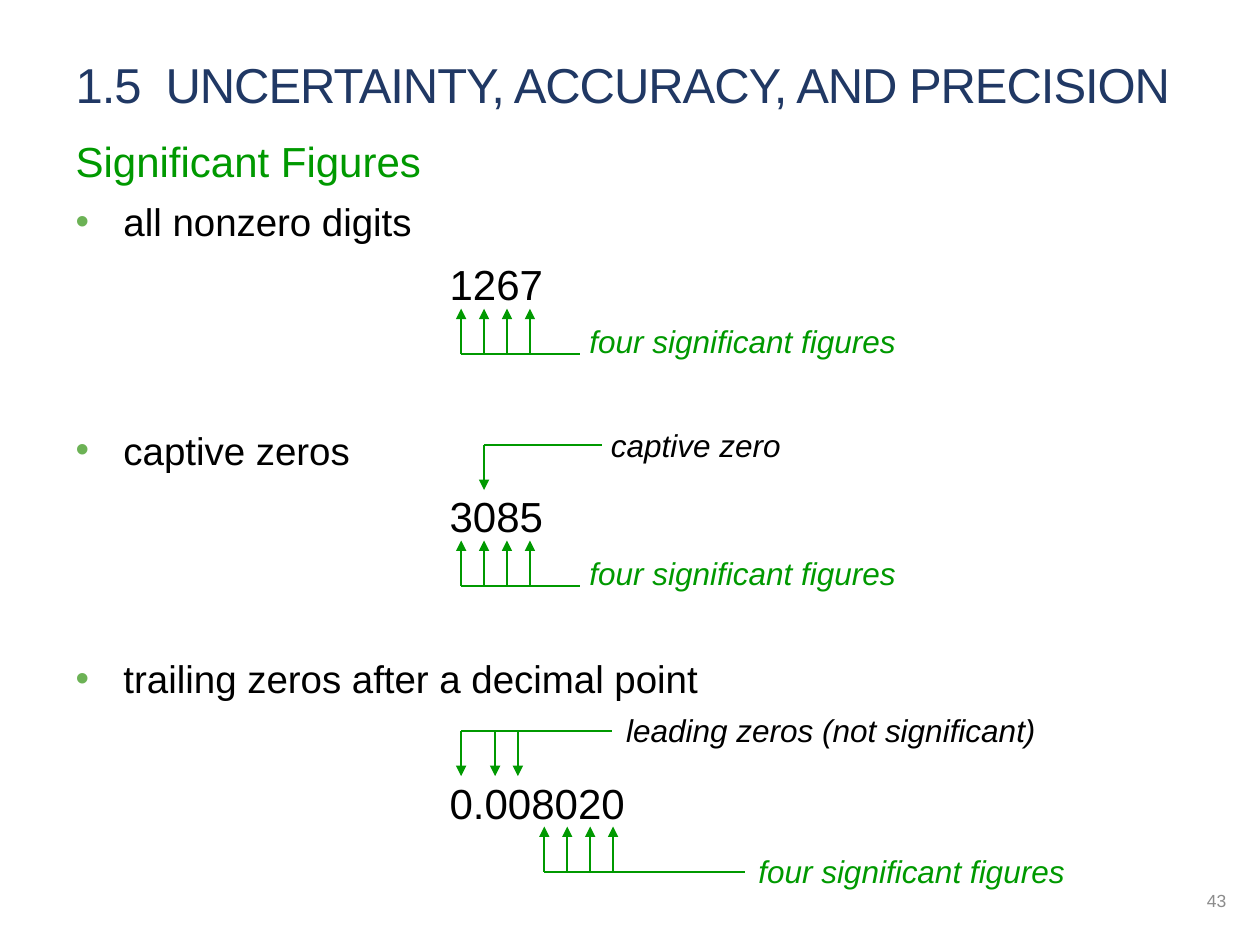
from lxml.etree import SubElement
from pptx import Presentation
from pptx.dml.color import RGBColor
from pptx.enum.shapes import MSO_CONNECTOR
from pptx.enum.text import MSO_ANCHOR, MSO_AUTO_SIZE, PP_ALIGN
from pptx.oxml.ns import qn
from pptx.util import Inches, Pt

NAVY = RGBColor(0x20, 0x38, 0x64)
GREEN = RGBColor(0x00, 0x99, 0x00)
BULLET_GREEN = RGBColor(0x6C, 0xB2, 0x55)
GRAY = RGBColor(0x8C, 0x8C, 0x8C)
BLACK = RGBColor(0x00, 0x00, 0x00)

COLUMNS, ROWS = 100, 75
DIGIT_STEP = 1.82
FIRST_DIGIT = 36.6
ARROW_LENGTH = 3.6


class SlideBuilder:
    font_name = "Arial"
    line_width = Pt(1)

    def __init__(self, presentation):
        self.slide = presentation.slides.add_slide(presentation.slide_layouts[1])
        self.column = presentation.slide_width / COLUMNS
        self.row = presentation.slide_height / ROWS

    def scale(self, column, row):
        return round(column * self.column), round(row * self.row)

    def place(self, shape, left, top, width, height):
        shape.left, shape.top = self.scale(left, top)
        shape.width, shape.height = self.scale(width, height)

    def style(self, paragraph, size, color, italic=False, align=PP_ALIGN.LEFT):
        paragraph.alignment = align
        font = paragraph.font
        font.name, font.size, font.italic = self.font_name, Pt(size), italic
        font.color.rgb = color

    def title(self, text, *box):
        shape = self.slide.shapes.title
        self.place(shape, *box)
        frame = shape.text_frame
        frame.text = text
        frame.auto_size = MSO_AUTO_SIZE.NONE
        frame.vertical_anchor = MSO_ANCHOR.BOTTOM
        paragraph = frame.paragraphs[0]
        self.style(paragraph, 28, NAVY)
        paragraph.runs[0]._r.get_or_add_rPr().set("spc", "-60")

    def bullet(self, paragraph, character=None):
        properties = paragraph._p.get_or_add_pPr()
        indent = Inches(0.38) if character else 0
        properties.set("marL", str(indent))
        properties.set("indent", str(-indent))
        if character:
            color = SubElement(properties, qn("a:buClr"))
            SubElement(color, qn("a:srgbClr"), val=str(BULLET_GREEN))
            SubElement(properties, qn("a:buChar"), char=character)
        else:
            SubElement(properties, qn("a:buNone"))

    def body(self, heading, items, gap, *box):
        shape = self.slide.placeholders[1]
        self.place(shape, *box)
        frame = shape.text_frame
        frame.auto_size = MSO_AUTO_SIZE.NONE
        frame.text = "\n".join([heading, *items])
        for index, paragraph in enumerate(frame.paragraphs):
            self.bullet(paragraph, "•" if index else None)
            self.style(paragraph, 22 if index else 24, BLACK if index else GREEN)
            paragraph.line_spacing = 1.04
            paragraph.space_before = Pt(gap if index > 1 else 0)
            paragraph.space_after = Pt(6)

    def text(self, text, left, top, width, height, size, color, italic=False):
        shape = self.slide.shapes.add_textbox(
            *self.scale(left, top), *self.scale(width, height))
        frame = shape.text_frame
        frame.text = text
        frame.word_wrap = False
        frame.auto_size = MSO_AUTO_SIZE.SHAPE_TO_FIT_TEXT
        self.style(frame.paragraphs[0], size, color, italic)

    def number(self, text, top, width):
        self.text(text, 34.7, top, width, 5, 24, BLACK)

    def label(self, text, left, top, width, color=GREEN):
        self.text(text, left, top, width, 4, 18, color, italic=True)

    def page_number(self, text, left, top, width, height):
        shape = self.slide.shapes.add_textbox(
            *self.scale(left, top), *self.scale(width, height))
        frame = shape.text_frame
        frame.text = text
        frame.word_wrap = True
        frame.vertical_anchor = MSO_ANCHOR.MIDDLE
        self.style(frame.paragraphs[0], 10, GRAY, align=PP_ALIGN.RIGHT)

    def line(self, start, end, arrow=False):
        connector = self.slide.shapes.add_connector(
            MSO_CONNECTOR.STRAIGHT, *self.scale(*start), *self.scale(*end))
        connector.line.color.rgb = GREEN
        connector.line.width = self.line_width
        if arrow:
            SubElement(connector.line._get_or_add_ln(), qn("a:tailEnd"), type="triangle")
        SubElement(connector._element.spPr, qn("a:effectLst"))

    def bracket(self, columns, bar, end, direction):
        for column in columns:
            self.line((column, bar), (column, bar + direction * ARROW_LENGTH), arrow=True)
        self.line((columns[0], bar), (end, bar))


def digits(first, count=4):
    return [first + index * DIGIT_STEP for index in range(count)]


def main():
    presentation = Presentation()
    presentation.slide_width, presentation.slide_height = Inches(10), Inches(7.5)
    builder = SlideBuilder(presentation)

    builder.title("1.5  UNCERTAINTY, ACCURACY, AND PRECISION", 5, 3.8, 93.3, 5.7)
    builder.body(
        "Significant Figures",
        ["all nonzero digits", "captive zeros", "trailing zeros after a decimal point"],
        97, 5, 10.1, 87.9, 54.5)
    builder.page_number("43", 75.8, 69.5, 22.5, 4)

    for number, top in (("1267", 20), ("3085", 38.4)):
        builder.number(number, top, 9.5)
        builder.bracket(digits(FIRST_DIGIT), top + 8.1, 46, -1)
        builder.label("four significant figures", 45.8, top + 5.1, 26.6)

    builder.bracket([FIRST_DIGIT + DIGIT_STEP], 35.3, 47.8, 1)
    builder.label("captive zero", 47.5, 33.3, 15.6, BLACK)

    builder.number("0.008020", 61.2, 16.1)
    builder.bracket(digits(43.2), 69.2, 59.1, -1)
    builder.label("four significant figures", 59.2, 67.1, 26.6)
    builder.bracket([FIRST_DIGIT, 39.3, 41.1], 58, 48.6, 1)
    builder.label("leading zeros (not significant)", 48.7, 55.9, 34.8, BLACK)

    presentation.save("out.pptx")


if __name__ == "__main__":
    main()
